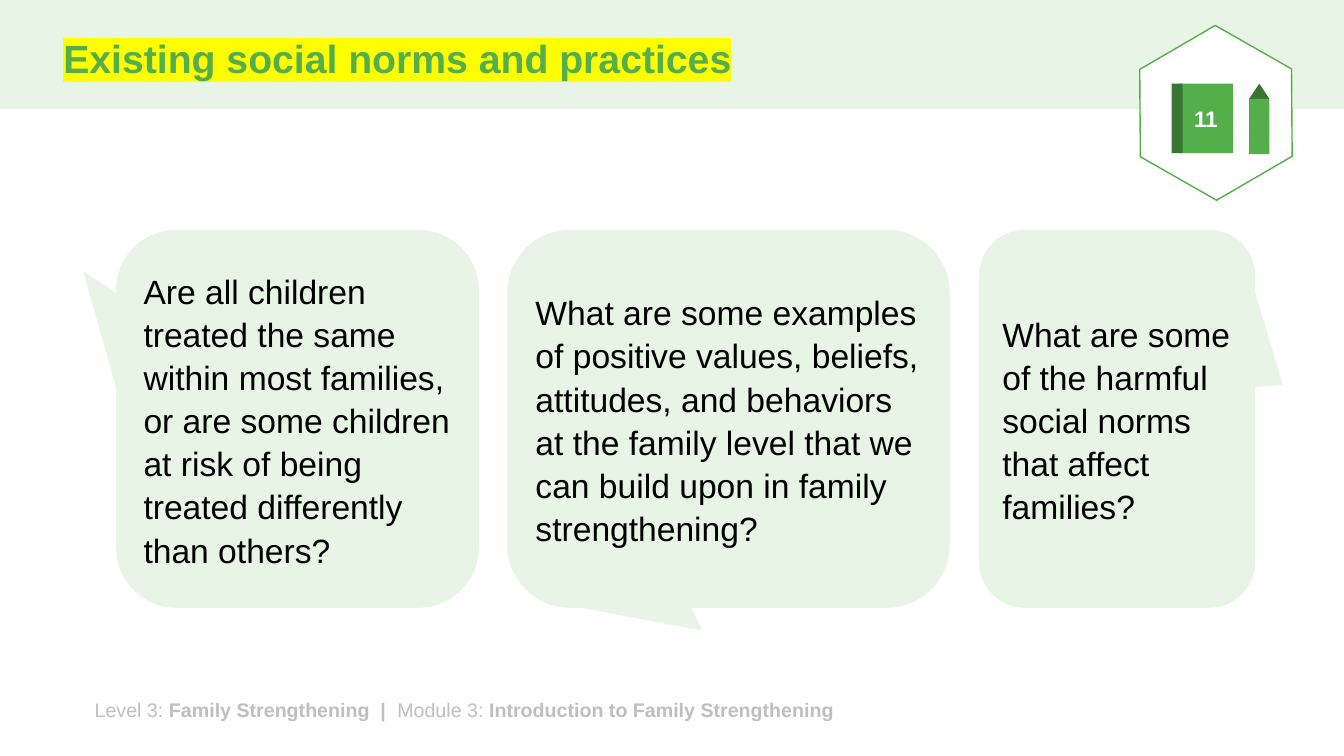
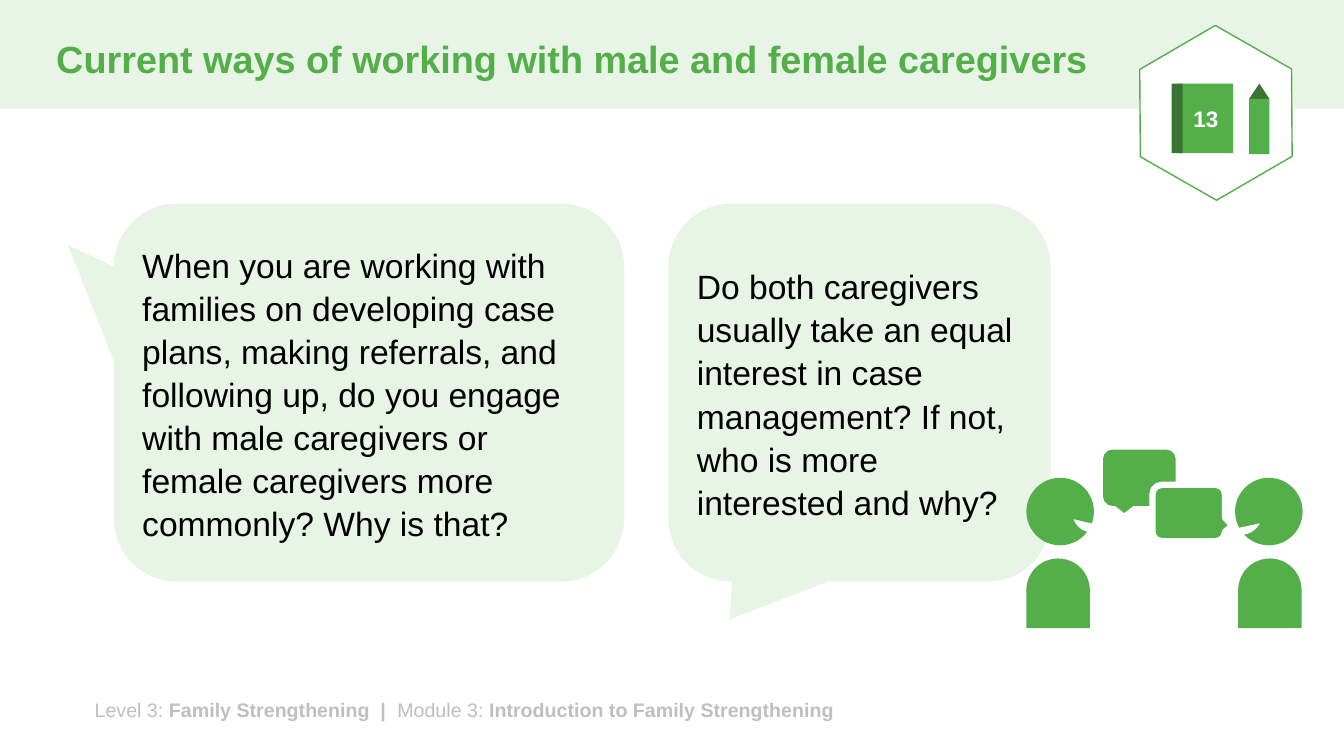
from lxml import etree
from pptx import Presentation
from pptx import util as u
from pptx.dml.color import RGBColor
from pptx.enum import shapes, text
from pptx.oxml.ns import qn

FONT = "Arial"
GREEN, DARK, PALE = "54AF4B", "387532", "E8F4E6"
WHITE, BLACK, GREY, YELLOW = "FFFFFF", "000000", "BFBFBF", "FFFF00"
KIND = shapes.MSO_SHAPE
FOOTER = [("Level 3: ", False), ("Family Strengthening  |  ", True),
          ("Module 3: ", False), ("Introduction to Family Strengthening", True)]


def colour(value):
    """Turn a hex string into a colour."""
    return RGBColor.from_string(value)


def write(box, spans, size, ink, bold=False, align=text.PP_ALIGN.LEFT, wrap=True,
          anchor=text.MSO_ANCHOR.MIDDLE, spacing=1.0, after=0, highlight=None):
    """Write one paragraph, given as a string or as (words, bold) spans."""
    frame = box.text_frame
    frame.word_wrap = wrap
    frame.vertical_anchor = anchor
    para = frame.paragraphs[0]
    para.alignment = align
    para.line_spacing = spacing
    para.space_after = u.Pt(after)
    for words, heavy in [(spans, bold)] if isinstance(spans, str) else spans:
        span = para.add_run()
        span.text = words
        span.font.name = FONT
        span.font.size = u.Pt(size)
        span.font.bold = heavy
        span.font.color.rgb = colour(ink)
        if highlight:
            mark = etree.Element(qn("a:highlight"))
            etree.SubElement(mark, qn("a:srgbClr"), val=highlight)
            span.font._element.find(qn("a:solidFill")).addnext(mark)


def add_text(page, area, spans, **style):
    """Add a text box over an area."""
    box = page.shapes.add_textbox(*map(u.Inches, area))
    write(box, spans, **style)


def add_shape(page, kind, area, fill, line=None, width=1, adjust=()):
    """Add a flat preset shape over an area."""
    shape = page.shapes.add_shape(kind, *map(u.Inches, area))
    shape.shadow.inherit = False
    shape.fill.solid()
    shape.fill.fore_color.rgb = colour(fill)
    if line:
        shape.line.color.rgb = colour(line)
        shape.line.width = u.Pt(width)
    else:
        shape.line.fill.background()
    for index, value in enumerate(adjust):
        shape.adjustments[index] = value
    return shape


def add_badge(page, left, top, number):
    """Draw the hexagon with a numbered book and a pencil."""
    hexagon = add_shape(page, KIND.HEXAGON, (left, top, 1.74, 1.5), WHITE, GREEN, adjust=[0.29])
    hexagon.rotation = 29.7
    book_top = top + 0.46
    book = add_shape(page, KIND.RECTANGLE, (left + 0.5, book_top, 0.54, 0.69), GREEN)
    write(book, number, 16, WHITE, bold=True, align=text.PP_ALIGN.CENTER, wrap=False)
    add_shape(page, KIND.RECTANGLE, (left + 0.43, book_top, 0.11, 0.69), DARK)
    add_shape(page, KIND.ISOSCELES_TRIANGLE, (left + 1.2, book_top, 0.2, 0.15), DARK)
    add_shape(page, KIND.RECTANGLE, (left + 1.2, book_top + 0.15, 0.2, 0.55), GREEN)


def add_bubbles(page, top, bubbles):
    """Draw a row of speech bubbles, each with its question and tail."""
    for left, width, tail, question in bubbles:
        bubble = add_shape(page, KIND.ROUNDED_RECTANGULAR_CALLOUT,
                           (left, top, width, 3.75), PALE, adjust=tail)
        write(bubble, question, 24, BLACK, spacing=1.07, after=8)


def add_talkers(page, left, top):
    """Draw two people talking to each other."""
    for offset in (0, 2.07):
        add_shape(page, KIND.OVAL, (left + offset, top + 0.28, 0.67, 0.67), GREEN)
    for offset in (0, 2.1):
        add_shape(page, KIND.ROUND_2_SAME_RECTANGLE,
                  (left + offset, top + 1.08, 0.63, 0.69), GREEN, adjust=[0.5, 0])
    for x, y, width, flipped in [(0.46, 0.45, 0.37, False), (1.88, 0.48, 0.45, True)]:
        mouth = add_shape(page, KIND.CHORD, (left + x, top + y, width, 0.37),
                          WHITE, adjust=[27, 97.34])
        if flipped:
            mouth._element.spPr.find(qn("a:xfrm")).set("flipH", "1")
    for x, y, line, tail in [(0.76, 0, None, ()), (1.25, 0.35, WHITE, (0.6, 0.22))]:
        add_shape(page, KIND.ROUNDED_RECTANGULAR_CALLOUT, (left + x, top + y, 0.72, 0.56),
                  GREEN, line, 4.5, tail)


def add_page(deck, title, title_left, title_width, title_size, number, highlight=None):
    """Add a page with its band, footer, title and badge."""
    page = deck.slides.add_slide(deck.slide_layouts[6])
    add_shape(page, KIND.RECTANGLE, (0, 0, 13.33, 1.08), PALE)
    add_text(page, (0.84, 6.87, 10.62, 0.34), FOOTER, size=14, ink=GREY,
             anchor=text.MSO_ANCHOR.TOP)
    add_text(page, (title_left, 0.13, title_width, 0.95), title, size=title_size,
             ink=GREEN, bold=True, spacing=0.9, highlight=highlight)
    add_badge(page, 11.19, 0.37, number)
    return page


def add_norms_page(deck):
    """Build the page on social norms."""
    page = add_page(deck, "Existing social norms and practices", 0.53, 10.42, 28, "11", YELLOW)
    add_bubbles(page, 2.28, [
        (1.15, 3.6, (-0.59, -0.39), "Are all children treated the same within most families, "
         "or are some children at risk of being treated differently than others?"),
        (5.03, 4.39, (-0.06, 0.56), "What are some examples of positive values, beliefs, "
         "attitudes, and behaviors at the family level that we can build upon in family "
         "strengthening?"),
        (9.71, 2.74, (0.6, -0.09), "What are some of the harmful social norms that affect "
         "families?"),
    ])


def add_caregivers_page(deck):
    """Build the page on working with caregivers."""
    page = add_page(deck, "Current ways of working with male and female caregivers",
                    0.46, 11.5, 27, "13")
    add_bubbles(page, 2.02, [
        (1.13, 5.06, (-0.59, -0.39), "When you are working with families on developing case "
         "plans, making referrals, and following up, do you engage with male caregivers or "
         "female caregivers more commonly? Why is that?"),
        (6.63, 3.79, (-0.34, 0.6), "Do both caregivers usually take an equal interest in case "
         "management? If not, who is more interested and why?"),
    ])
    add_talkers(page, 10.18, 4.46)


def main():
    """Build and save the deck."""
    deck = Presentation()
    deck.slide_width, deck.slide_height = u.Inches(13.33), u.Inches(7.5)
    add_norms_page(deck)
    add_caregivers_page(deck)
    deck.save("out.pptx")


if __name__ == "__main__":
    main()
